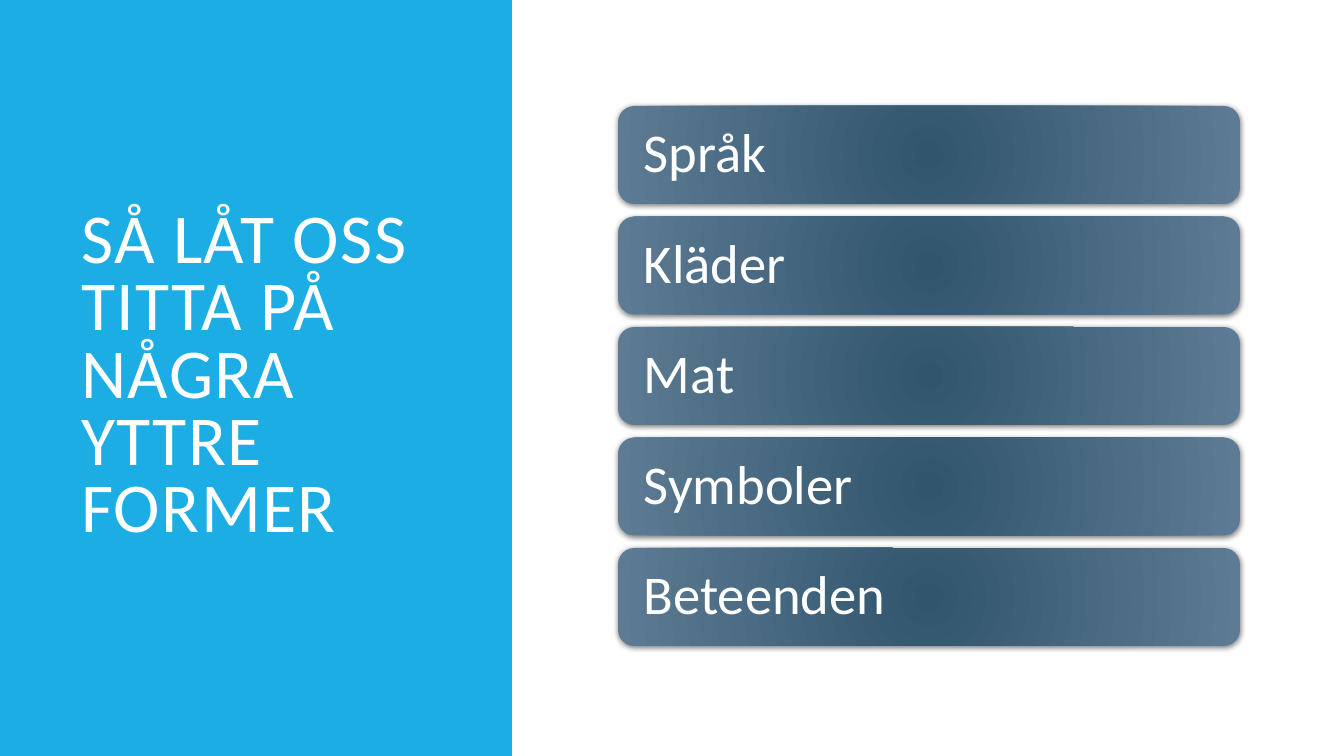
import lxml.etree
import pptx
import pptx.dml.color
import pptx.enum.shapes
import pptx.enum.text
import pptx.oxml
import pptx.oxml.ns
import pptx.util

PX = 914400 / 100.8
BLUE = pptx.dml.color.RGBColor(0x1C, 0xAD, 0xE4)
WHITE = pptx.dml.color.RGBColor(0xFF, 0xFF, 0xFF)
DARK_SLATE = pptx.dml.color.RGBColor(0x30, 0x55, 0x6C)
LIGHT_SLATE = pptx.dml.color.RGBColor(0x5D, 0x7B, 0x94)
SHAPES = pptx.enum.shapes.MSO_SHAPE
ANCHOR = pptx.enum.text.MSO_ANCHOR
NAMESPACE = pptx.oxml.ns.nsdecls("a")
FORMS = ["Språk", "Kläder", "Mat", "Symboler", "Beteenden"]
FIRST_TOP, LAST_TOP = 106, 548


def px(length):
    return pptx.util.Emu(round(length * PX))


def style_text(shape, size, line_spacing):
    frame = shape.text_frame
    frame.word_wrap = True
    frame.auto_size = pptx.enum.text.MSO_AUTO_SIZE.NONE
    frame.vertical_anchor = ANCHOR.MIDDLE
    para = frame.paragraphs[0]
    para.alignment = pptx.enum.text.PP_ALIGN.LEFT
    para.line_spacing = line_spacing
    para.font.name = "Calibri"
    para.font.size = pptx.util.Pt(size)
    para.font.color.rgb = WHITE


deck = pptx.Presentation()
deck.slide_width = px(1344)
deck.slide_height = px(756)
page = deck.slides.add_slide(deck.slide_layouts[5])
page.background.fill.solid()
page.background.fill.fore_color.rgb = WHITE

panel = page.shapes.add_shape(SHAPES.RECTANGLE, 0, 0, px(512), px(756))
panel.shadow.inherit = False
panel.fill.solid()
panel.fill.fore_color.rgb = BLUE
panel.line.fill.background()
title = page.shapes.title
panel._element.addnext(title._element)

title.left, title.top, title.width, title.height = px(71), px(71), px(377), px(614)
title.text = "SÅ LÅT OSS TITTA PÅ NÅGRA YTTRE FORMER"
style_text(title, 50, 0.8)
title.text_frame.paragraphs[0].runs[0].font._element.set("spc", "100")

for index, form in enumerate(FORMS):
    top = FIRST_TOP + index * (LAST_TOP - FIRST_TOP) / (len(FORMS) - 1)
    box = page.shapes.add_shape(SHAPES.ROUNDED_RECTANGLE, px(618), px(top), px(622), px(98))
    box.line.fill.background()
    box.fill.gradient()
    for stop, color in zip(box.fill.gradient_stops, (DARK_SLATE, LIGHT_SLATE)):
        stop.color.rgb = color
    gradient = box._element.spPr.find(pptx.oxml.ns.qn("a:gradFill"))
    linear = gradient.find(pptx.oxml.ns.qn("a:lin"))
    gradient.replace(linear, pptx.oxml.parse_xml(
        f'<a:path {NAMESPACE} path="circle">'
        '<a:fillToRect l="100000" t="100000" r="100000" b="100000"/></a:path>'))

    box.shadow.inherit = False
    effects = box._element.spPr.find(pptx.oxml.ns.qn("a:effectLst"))
    effects.append(pptx.oxml.parse_xml(
        f'<a:outerShdw {NAMESPACE} blurRad="50800" dist="12700" dir="5400000" rotWithShape="0">'
        '<a:srgbClr val="000000"><a:alpha val="50000"/></a:srgbClr></a:outerShdw>'))

    box.text = form
    style_text(box, 39, 0.9)
    box.text_frame.margin_left = box.text_frame.margin_right = px(21)

deck.save("out.pptx")
